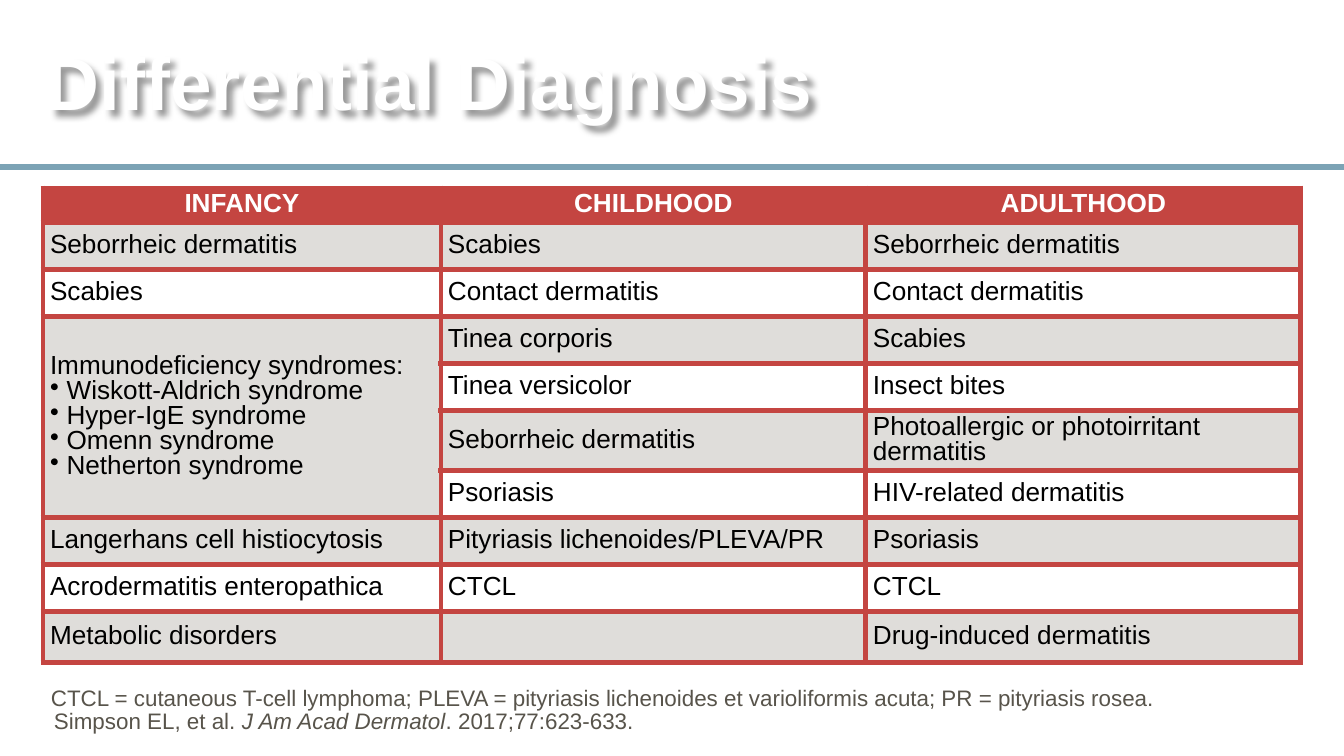
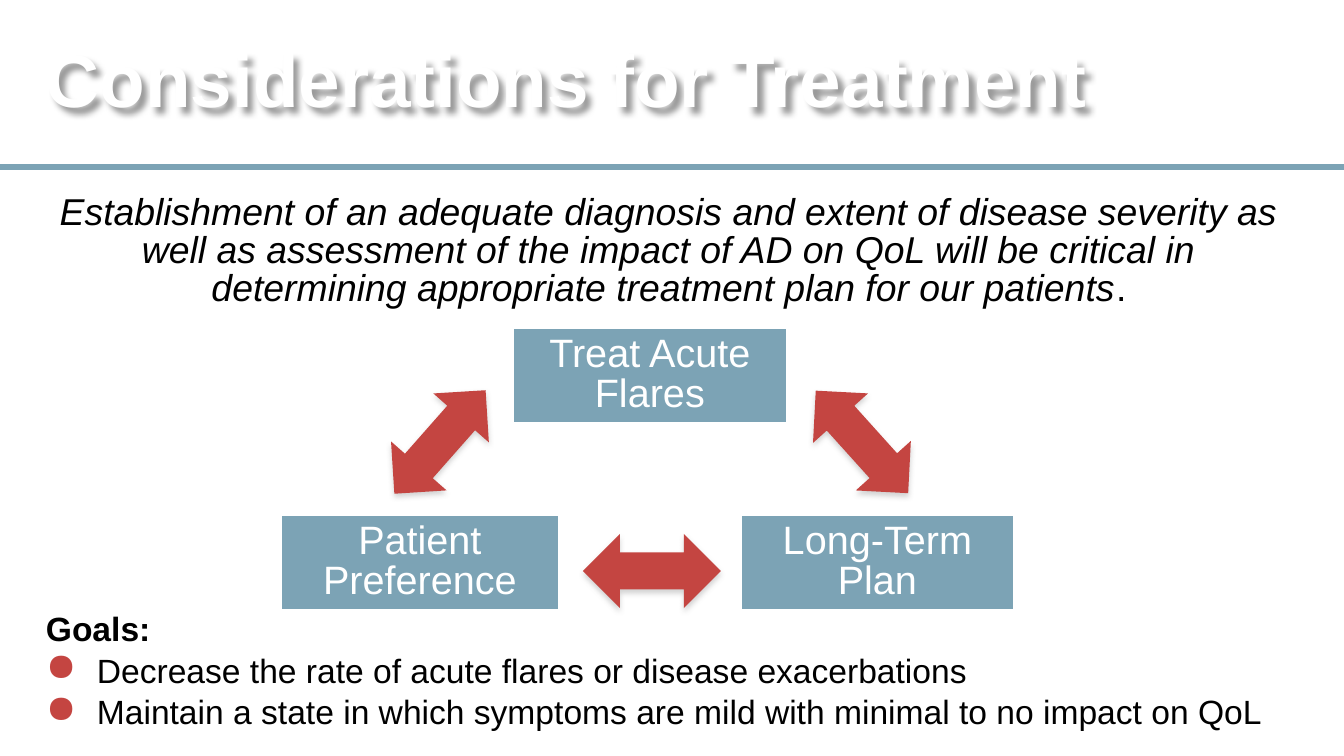
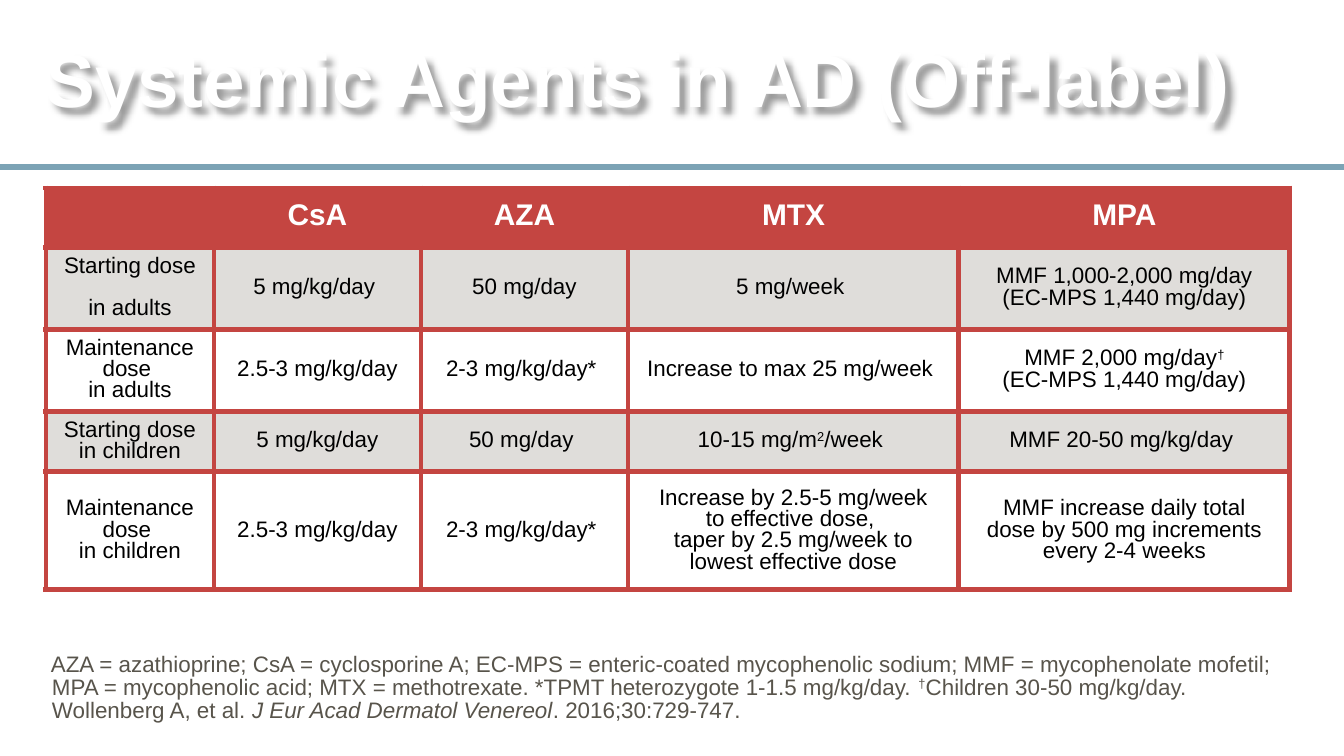
from copy import deepcopy

from lxml import etree
from pptx import Presentation
from pptx import util as u
from pptx.dml.color import RGBColor
from pptx.enum import shapes, text
from pptx.oxml import ns

W, H = 1344, 756
EMU_PER_PX = 914400 / 134.4
FONT = "Arial"
SPACING = 0.85
COLORS = {
    "white": "FFFFFF",
    "black": "000000",
    "blue": "7CA3B5",
    "red": "C44541",
    "band": "DFDDDA",
    "note": "58544B",
    "shade": "808080",
}
LEFT, CENTER = text.PP_ALIGN.LEFT, text.PP_ALIGN.CENTER
TOP, MIDDLE, BOTTOM = (
    text.MSO_ANCHOR.TOP, text.MSO_ANCHOR.MIDDLE, text.MSO_ANCHOR.BOTTOM)


# Shared helpers
def px(n):
    return u.Emu(round(n * EMU_PER_PX))


def rgb(name):
    return RGBColor.from_string(COLORS[name])


def sub(parent, tag, **attrs):
    el = etree.SubElement(parent, ns.qn(tag))
    for key, value in attrs.items():
        el.set(key, str(value))
    return el


def add_runs(p, runs, size, color, bold=False, italic=False):
    """Each run is a string or (string, style); a newline is a line break."""
    for run in [runs] if isinstance(runs, str) else runs:
        words, style = (run, "") if isinstance(run, str) else run
        for i, part in enumerate(words.split("\n")):
            if i:
                p.add_line_break()
                p._p[-1].append(deepcopy(r._r.rPr))
            r = p.add_run()
            r.text = part
            r.font.name, r.font.size = FONT, u.Pt(size)
            r.font.color.rgb = rgb(color)
            r.font.bold = bold
            r.font.italic = style == "italic" or (italic and style != "plain")
            if style == "super":
                r._r.get_or_add_rPr().set("baseline", "30000")


def set_bullet(p, char, color=None, size=None, indent=0):
    pPr = p._p.get_or_add_pPr()
    pPr.set("marL", str(px(indent)))
    pPr.set("indent", str(-px(indent)))
    if color:
        sub(sub(pPr, "a:buClr"), "a:srgbClr", val=COLORS[color])
    if size:
        sub(pPr, "a:buSzPct", val=size * 1000)
    sub(pPr, "a:buChar", char=char)


def set_hang(p, indent):
    pPr = p._p.get_or_add_pPr()
    pPr.set("marL", str(px(indent)))
    pPr.set("indent", str(-px(indent)))


def next_paragraph(tf, align=LEFT):
    p = tf.paragraphs[0]
    if len(p._p.findall(ns.qn("a:r"))):
        p = tf.add_paragraph()
    p.alignment, p.line_spacing = align, SPACING
    return p


def set_frame(tf, anchor, insets):
    tf.word_wrap = True
    tf.auto_size = text.MSO_AUTO_SIZE.NONE
    tf.vertical_anchor = anchor
    (tf.margin_left, tf.margin_top,
     tf.margin_right, tf.margin_bottom) = map(px, insets)


def add_box(s, box, anchor=TOP, insets=(0, 7, 13, 7)):
    tf = s.shapes.add_textbox(*map(px, box)).text_frame
    set_frame(tf, anchor, insets)
    return tf


def add_shadow(sp, color, alpha, blur, dist, angle):
    sp.shadow.inherit = False
    effects = sp._element.spPr.find(ns.qn("a:effectLst"))
    shadow = sub(effects, "a:outerShdw", blurRad=u.Pt(blur), dist=u.Pt(dist),
                 dir=angle * 60000, algn="ctr", rotWithShape=0)
    sub(sub(shadow, "a:srgbClr", val=COLORS[color]),
        "a:alpha", val=alpha * 1000)


# Slide frame: rule and title
def add_slide(prs, title, box):
    s = prs.slides.add_slide(prs.slide_layouts[5])
    rule = s.shapes.add_connector(
        shapes.MSO_CONNECTOR.STRAIGHT, 0, px(167), px(W), px(167))
    rule.line.color.rgb, rule.line.width = rgb("blue"), u.Pt(3)
    sub(rule._element.spPr, "a:effectLst")

    sp = s.shapes.title
    sp.left, sp.top, sp.width, sp.height = map(px, box)
    set_frame(sp.text_frame, MIDDLE, (0, 7, 13, 7))
    add_runs(next_paragraph(sp.text_frame), title, 40, "white", bold=True)
    add_shadow(sp, "black", 40, 3, 4, 45)
    return s


def add_footnote(s, box, runs, hang):
    p = next_paragraph(add_box(s, box, BOTTOM, (51, 0, 0, 34)))
    set_hang(p, hang)
    add_runs(p, runs, 12, "note")


# Banded table with red grid
def format_cell(cell, fill, insets):
    tcPr = cell._tc.get_or_add_tcPr()
    for side in ("a:lnL", "a:lnR", "a:lnT", "a:lnB"):
        ln = sub(tcPr, side, w=u.Pt(3))
        sub(sub(ln, "a:solidFill"), "a:srgbClr", val=COLORS["red"])
    cell.fill.solid()
    cell.fill.fore_color.rgb = rgb(fill)
    cell.vertical_anchor = MIDDLE
    (cell.margin_left, cell.margin_top,
     cell.margin_right, cell.margin_bottom) = map(px, insets)


def add_grid(s, left, top, widths, heights, rows, insets, head_size, size,
             align):
    """A cell is a string or a list of paragraphs; None is a merged cell."""
    table = s.shapes.add_table(
        len(rows), len(widths), px(left), px(top),
        px(sum(widths)), px(sum(heights))).table
    table.horz_banding = False
    for column, width in zip(table.columns, widths):
        column.width = px(width)
    for i, (row, height) in enumerate(zip(rows, heights)):
        table.rows[i].height = px(height)
        fill = "red" if i == 0 else "band" if i % 2 else "white"
        for j, content in enumerate(row):
            cell = table.cell(i, j)
            format_cell(cell, fill, insets)
            paragraphs = [content] if isinstance(content, str) else content
            for runs in paragraphs or []:
                if not runs:
                    continue
                p = next_paragraph(cell.text_frame, CENTER if i == 0 else align)
                if isinstance(runs, str) and runs.startswith(" "):
                    set_bullet(p, "•")
                if i == 0:
                    add_runs(p, runs, head_size, "white", bold=True)
                else:
                    add_runs(p, runs, size, "black")
    return table


# Treatment triangle
def add_triangle(s, left, top):
    nodes = [
        (232, 0, 274, ["Treat Acute Flares"]),
        (0, 187, 278, ["Patient Preference"]),
        (460, 187, 273, ["Long-Term", "Plan"]),
    ]
    for x, y, width, lines in nodes:
        sp = s.shapes.add_shape(shapes.MSO_SHAPE.RECTANGLE, px(left + x),
                                px(top + y), px(width), px(95))
        sp.shadow.inherit = False
        sp.fill.solid()
        sp.fill.fore_color.rgb = rgb("blue")
        sp.line.color.rgb, sp.line.width = rgb("white"), u.Pt(0.75)
        set_frame(sp.text_frame, TOP, (13, 7, 13, 7))
        for line in lines:
            add_runs(next_paragraph(sp.text_frame, CENTER), line, 21.2, "white")

    for x, y, angle in [(512, 77, 48), (90, 77, 131.4), (302, 206, 0)]:
        sp = s.shapes.add_shape(shapes.MSO_SHAPE.LEFT_RIGHT_ARROW,
                                px(left + x), px(top + y), px(138), px(74))
        sp.rotation = angle
        sp.fill.solid()
        sp.fill.fore_color.rgb = rgb("red")
        sp.line.fill.background()
        add_shadow(sp, "shade", 35, 3.1, 1.8, 90)


def add_goals(s, box, heading, goals):
    tf = add_box(s, box)
    add_runs(next_paragraph(tf), heading, 18, "black", bold=True)
    for goal in goals:
        p = next_paragraph(tf)
        p.space_before = u.Pt(4)
        set_bullet(p, "●", "red", 115, 51)
        add_runs(p, goal, 18, "black")


# Slides
def differential_slide(prs):
    s = add_slide(prs, "Differential Diagnosis", (46, 43, 1098, 90))
    add_footnote(s, (0, 687, W, 81), [
        "CTCL = cutaneous T-cell lymphoma; PLEVA = pityriasis lichenoides et "
        "varioliformis acuta; PR = pityriasis rosea. \nSimpson EL, et al. ",
        ("J Am Acad Dermatol", "italic"), ". 2017;77:623-633."], 3)
    syndromes = ["Immunodeficiency syndromes:", " Wiskott-Aldrich syndrome",
                 " Hyper-IgE syndrome", " Omenn syndrome",
                 " Netherton syndrome"]
    rows = [
        ("INFANCY", "CHILDHOOD", "ADULTHOOD"),
        ("Seborrheic dermatitis", "Scabies", "Seborrheic dermatitis"),
        ("Scabies", "Contact dermatitis", "Contact dermatitis"),
        (syndromes, "Tinea corporis", "Scabies"),
        (None, "Tinea versicolor", "Insect bites"),
        (None, "Seborrheic dermatitis",
         "Photoallergic or photoirritant dermatitis"),
        (None, "Psoriasis", "HIV-related dermatitis"),
        ("Langerhans cell histiocytosis", "Pityriasis lichenoides/PLEVA/PR",
         "Psoriasis"),
        ("Acrodermatitis enteropathica", "CTCL", "CTCL"),
        ("Metabolic disorders", "", "Drug-induced dermatitis"),
    ]
    table = add_grid(s, 43, 188, (398, 425, 435), [27] + [47] * 9, rows,
                     (7, 5, 7, 5), 14, 14, LEFT)
    table.cell(3, 0).merge(table.cell(6, 0))


def treatment_slide(prs):
    s = add_slide(prs, "Considerations for Treatment", (46, 40, 1098, 90))
    p = next_paragraph(add_box(s, (46, 188, 1259, 129)), CENTER)
    add_runs(p, [
        "Establishment of an adequate diagnosis and extent of disease severity "
        "as well as assessment of the impact of AD on QoL will be critical in "
        "determining appropriate treatment plan for our patients",
        (".", "plain")], 20, "black", italic=True)
    add_goals(s, (46, 607, 1259, 133), "Goals:", [
        "Decrease the rate of acute flares or disease exacerbations",
        "Maintain a state in which symptoms are mild with minimal to no impact "
        "on QoL"])
    add_triangle(s, 281, 328)


def agents_slide(prs):
    s = add_slide(prs, "Systemic Agents in AD (Off-label)", (46, 1, 1220, 168))
    rows = [
        ("", "CsA", "AZA", "MTX", "MPA"),
        ("Starting dose \nin adults", "5 mg/kg/day ", "50 mg/day",
         "5 mg/week ", ["MMF 1,000-2,000 mg/day", "(EC-MPS 1,440 mg/day)"]),
        ("Maintenance dose \nin adults", "2.5-3 mg/kg/day", "2-3 mg/kg/day* ",
         "Increase to max 25 mg/week ",
         [["MMF 2,000 mg/day", ("†", "super")], "(EC-MPS 1,440 mg/day)"]),
        ("Starting dose\nin children", "5 mg/kg/day", "50 mg/day ",
         [["10-15 mg/m", ("2", "super"), "/week "]], "MMF 20-50 mg/kg/day "),
        ("Maintenance dose \nin children", "2.5-3 mg/kg/day",
         "2-3 mg/kg/day* ",
         ["Increase by 2.5-5 mg/week",
          "to effective dose, \ntaper by 2.5 mg/week to lowest effective dose"],
         ["MMF increase daily total dose by 500 mg increments",
          "every 2-4 weeks"]),
    ]
    add_grid(s, 46, 188, (168, 207, 207, 331, 331), (55, 78, 81, 59, 118),
             rows, (17, 9, 17, 9), 16, 12, CENTER)
    add_footnote(s, (0, 653, 1300, 104), [
        "AZA = azathioprine; CsA = cyclosporine A; EC-MPS = enteric-coated "
        "mycophenolic sodium; MMF = mycophenolate mofetil; MPA = mycophenolic "
        "acid; MTX = methotrexate. *TPMT heterozygote 1-1.5 mg/kg/day. ",
        ("†", "super"),
        "Children 30-50 mg/kg/day. Wollenberg A, et al. ",
        ("J Eur Acad Dermatol Venereol", "italic"), ". 2016;30:729-747."], 1)


def main():
    prs = Presentation()
    prs.slide_width, prs.slide_height = px(W), px(H)
    differential_slide(prs)
    treatment_slide(prs)
    agents_slide(prs)
    prs.save("out.pptx")


if __name__ == "__main__":
    main()
